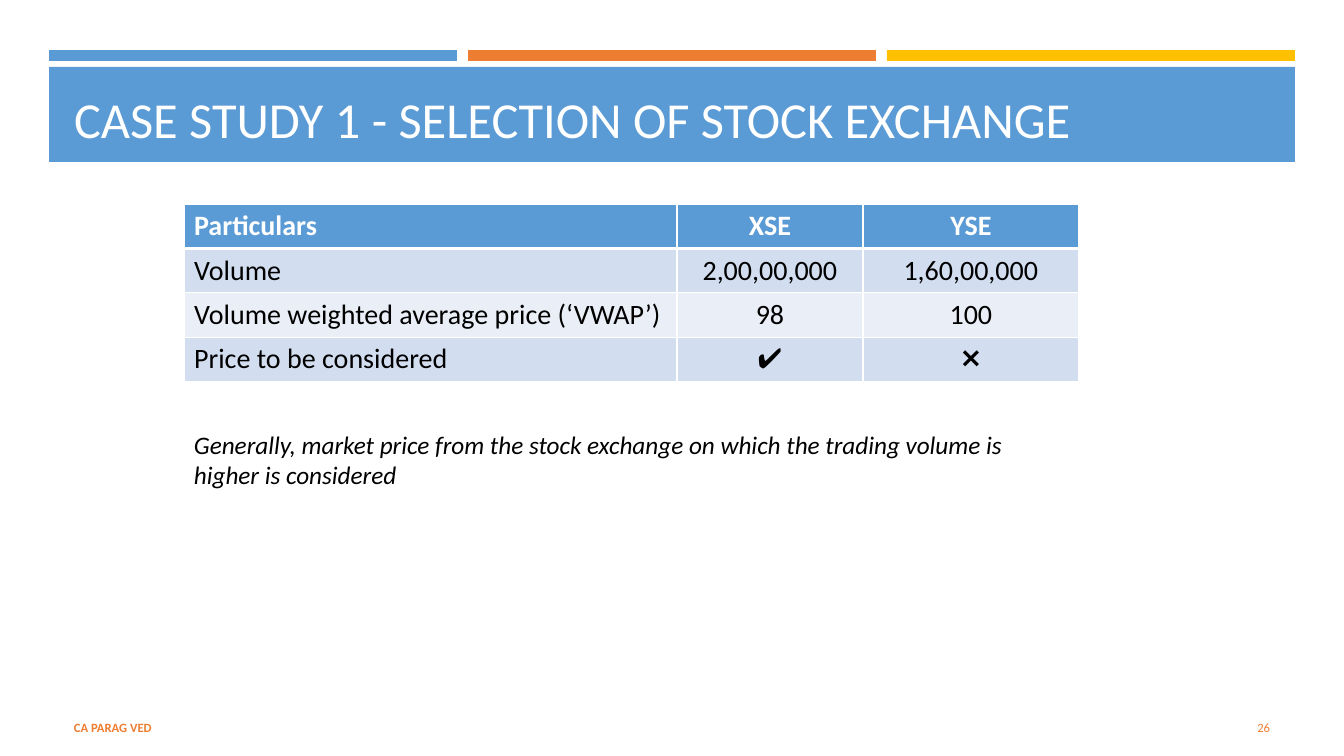
from dataclasses import dataclass

from lxml import etree
from pptx import Presentation
from pptx.dml.color import RGBColor
from pptx.enum.shapes import MSO_SHAPE
from pptx.enum.text import MSO_ANCHOR, PP_ALIGN
from pptx.oxml.ns import qn
from pptx.util import Pt

RECT = MSO_SHAPE.RECTANGLE
MIDDLE, TOP = MSO_ANCHOR.MIDDLE, MSO_ANCHOR.TOP
LEFT, CENTER, RIGHT = PP_ALIGN.LEFT, PP_ALIGN.CENTER, PP_ALIGN.RIGHT
SCALE = 914400 / 100.8


@dataclass(frozen=True)
class Theme:
    font: str = "Calibri"
    blue: str = "5B9BD5"
    orange: str = "ED7D31"
    gold: str = "FFC000"
    band_dark: str = "D2DEEF"
    band_light: str = "EAEFF7"
    white: str = "FFFFFF"
    black: str = "000000"
    title: int = 36
    table: int = 20
    note: int = 18
    footer: int = 9


theme = Theme()


def px(*values):
    return [round(v * SCALE) for v in values]


def write(tf, text, size, color, align=LEFT, bold=False, italic=False):
    p = tf.paragraphs[0]
    p.alignment = align
    r = p.add_run()
    r.text = text
    r.font.name = theme.font
    r.font.size = Pt(size)
    r.font.bold = bold
    r.font.italic = italic
    r.font.color.rgb = RGBColor.from_string(color)


prs = Presentation()
prs.slide_width, prs.slide_height = px(1344, 756)
s = prs.slides.add_slide(prs.slide_layouts[5])

bars = [
    (49, 50, 408, 11, theme.blue),
    (468, 50, 408, 11, theme.orange),
    (887, 50, 408, 11, theme.gold),
    (49, 67, 1246, 95, theme.blue),
]
for *box, color in bars:
    sp = s.shapes.add_shape(RECT, *px(*box))
    sp.shadow.inherit = False
    sp.fill.solid()
    sp.fill.fore_color.rgb = RGBColor.from_string(color)
    sp.line.fill.background()

title = s.shapes.title
title.left, title.top, title.width, title.height = px(64, 81, 1216, 75)
title.text_frame.vertical_anchor = MIDDLE
write(title.text_frame, "CASE STUDY 1 - SELECTION OF STOCK EXCHANGE", theme.title, theme.white)
s.shapes._spTree.append(title._element)

rows = [
    ("Particulars", "XSE", "YSE"),
    ("Volume", "2,00,00,000", "1,60,00,000"),
    ("Volume weighted average price (‘VWAP’)", "98", "100"),
    ("Price to be considered", "✔", "❌"),
]
table = s.shapes.add_table(4, 3, *px(184, 204, 895, 176)).table
for column, width in zip(table.columns, px(493, 186, 216)):
    column.width = width
for i, row in enumerate(rows):
    header = i == 0
    fill = theme.blue if header else theme.band_dark if i % 2 else theme.band_light
    for j, text in enumerate(row):
        cell = table.cell(i, j)
        tcPr = cell._tc.get_or_add_tcPr()
        for side in "LRTB":
            thick = (header and side == "B") or (i == 1 and side == "T")
            ln = etree.SubElement(tcPr, qn(f"a:ln{side}"), w=str(Pt(3 if thick else 1)))
            solid = etree.SubElement(ln, qn("a:solidFill"))
            etree.SubElement(solid, qn("a:srgbClr"), val=theme.white)
        cell.fill.solid()
        cell.fill.fore_color.rgb = RGBColor.from_string(fill)
        write(cell.text_frame, text, theme.table, theme.white if header else theme.black,
              CENTER if j else LEFT, bold=header)

note = "Generally, market price from the stock exchange on which the trading volume is higher is considered"
texts = [
    ((184, 424, 896, 71), TOP, note, theme.note, theme.black, LEFT, False, True),
    ((1164, 708, 116, 40), MIDDLE, "26", theme.footer, theme.orange, RIGHT, False, False),
    ((64, 708, 762, 40), MIDDLE, "CA PARAG VED", theme.footer, theme.orange, LEFT, True, False),
]
for box, anchor, *content in texts:
    tf = s.shapes.add_textbox(*px(*box)).text_frame
    tf.word_wrap = True
    tf.vertical_anchor = anchor
    write(tf, *content)

prs.save("out.pptx")
